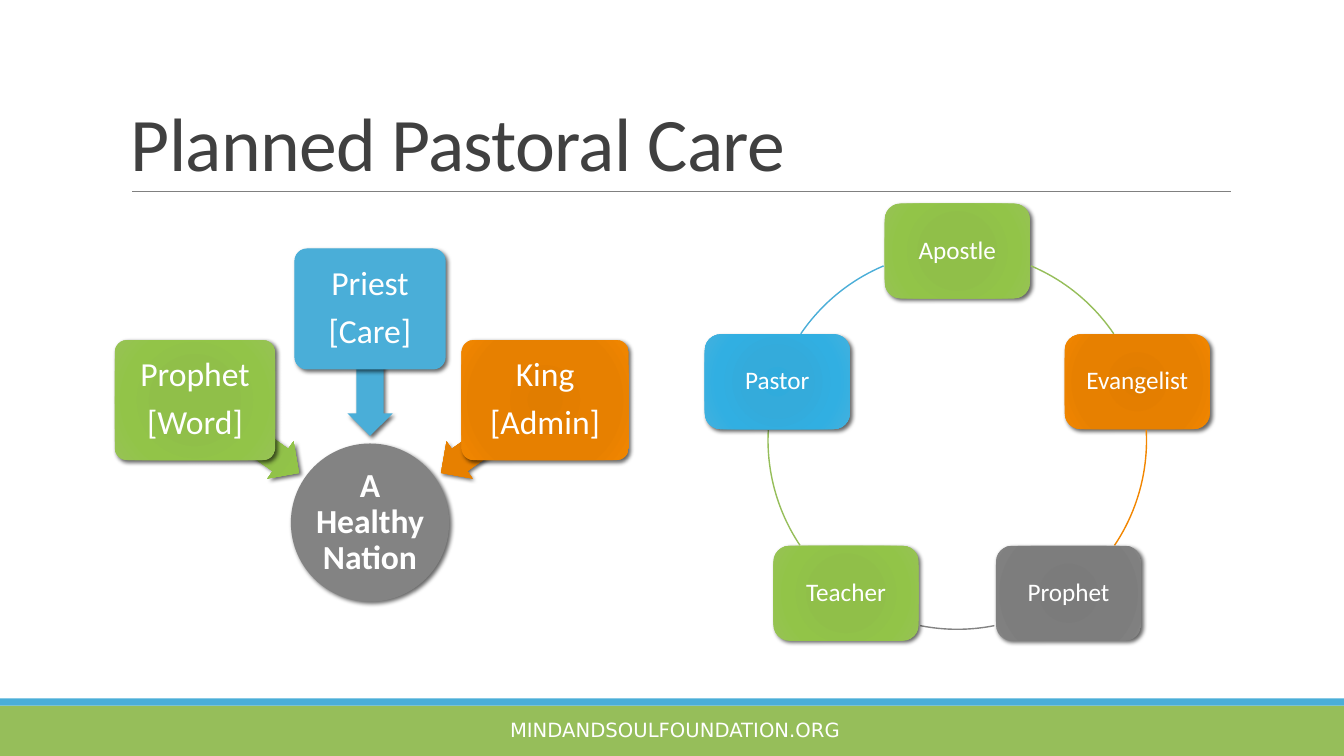
from dataclasses import dataclass
from math import cos, radians, sin

from pptx import Presentation
from pptx.dml.color import RGBColor
from pptx.enum.shapes import MSO_CONNECTOR, MSO_SHAPE
from pptx.enum.text import MSO_ANCHOR, PP_ALIGN
from pptx.oxml import parse_xml
from pptx.oxml.ns import qn
from pptx.util import Inches, Pt

SPACE = 'xmlns:a="http://schemas.openxmlformats.org/drawingml/2006/main"'


@dataclass(frozen=True)
class Theme:
    white: str = "FFFFFF"
    ink: str = "404040"
    rule: str = "808080"
    grey: str = "838383"
    green: str = "96BE5A"
    blue: str = "4AAED8"
    orange: str = "F28600"
    leaf: tuple = ("8FBF46", "90BF49", "92C448", "97C355")
    amber: tuple = ("E17D00", "E47E00", "E78000", "F28600")
    stone: tuple = ("7A7A7A", "7B7B7B", "7D7D7D", "838383")
    sky: tuple = ("30ABDC", "34ABDB", "31AFE2", "42B1DE")
    face: str = "Calibri"
    web: str = "DejaVu Sans"
    head: int = 54
    large: int = 24
    small: int = 18
    foot: int = 14


@dataclass(frozen=True)
class Box:
    x: float
    y: float
    w: float
    h: float

    def inches(self):
        return [Inches(v) for v in (self.x, self.y, self.w, self.h)]


THEME = Theme()


def about(x, y, w, h):
    return Box(x - w / 2, y - h / 2, w, h)


def polar(x, y, reach, angle):
    return x + reach * cos(radians(angle)), y + reach * sin(radians(angle))


def apply(thing, values):
    for name, value in values.items():
        setattr(thing, name, value)


def write(shape, lines, size, color=THEME.white, face=THEME.face, bold=False, wrap=True,
          align=PP_ALIGN.CENTER, anchor=MSO_ANCHOR.MIDDLE, pad=None, pitch=0.9, after=0.35):
    frame = shape.text_frame
    apply(frame, {"word_wrap": wrap, "vertical_anchor": anchor})
    if pad is not None:
        sides = ("left", "top", "right", "bottom")
        apply(frame, {f"margin_{side}": Inches(pad) for side in sides})
    for i, line in enumerate(lines):
        para = frame.add_paragraph() if i else frame.paragraphs[0]
        para.text = line
        apply(para, {"alignment": align, "line_spacing": pitch, "space_after": Pt(size * after)})
        for run in para.runs:
            apply(run.font, {"size": Pt(size), "name": face, "bold": bold})
            run.font.color.rgb = RGBColor.from_string(color)
    return frame


def paint(shape, tone):
    if isinstance(tone, str):
        shape.fill.solid()
        shape.fill.fore_color.rgb = RGBColor.from_string(tone)
        return
    stops = "".join(f'<a:gs pos="{spot * 1000}"><a:srgbClr val="{color}"/></a:gs>'
                    for spot, color in zip((0, 34, 70, 100), tone))
    edges = " ".join(f'{side}="100000"' for side in "ltrb")
    grade = parse_xml(f'<a:gradFill {SPACE} rotWithShape="1"><a:gsLst>{stops}</a:gsLst>'
                      f'<a:path path="circle"><a:fillToRect {edges}/></a:path></a:gradFill>')
    shape.element.spPr.find(qn("a:prstGeom")).addnext(grade)


def block(slide, kind, box, tone, shade=True, bends=(), turn=0):
    shape = slide.shapes.add_shape(kind, *box.inches())
    shape.rotation = turn
    for i, bend in enumerate(bends):
        shape.adjustments[i] = bend
    paint(shape, tone)
    shape.line.fill.background()
    shape.shadow.inherit = False
    if shade:
        shape.element.spPr.find(qn("a:effectLst")).append(parse_xml(
            f'<a:outerShdw {SPACE} blurRad="{Pt(3)}" dist="{Pt(2)}" dir="2700000" '
            'algn="br" rotWithShape="0"><a:srgbClr val="000000">'
            '<a:alpha val="60000"/></a:srgbClr></a:outerShdw>'))
    return shape


def footer(slide, box):
    strip = 0.07
    block(slide, MSO_SHAPE.RECTANGLE, Box(box.x, box.y + strip, box.w, box.h - strip),
          THEME.green, False)
    block(slide, MSO_SHAPE.RECTANGLE, Box(box.x, box.y, box.w, strip), THEME.blue, False)
    area = Box(box.x + 4.49, box.y + 0.14, 4.41, 0.34)
    label = slide.shapes.add_textbox(*area.inches())
    write(label, ["MINDANDSOULFOUNDATION.ORG"], THEME.foot, face=THEME.web,
          anchor=MSO_ANCHOR.TOP, pitch=1.0, after=0)


def header(slide, box):
    base = Inches(box.y + box.h)
    rule = slide.shapes.add_connector(MSO_CONNECTOR.STRAIGHT, Inches(box.x + 0.11), base,
                                      Inches(box.x + box.w + 0.01), base)
    rule.line.width = Pt(0.5)
    rule.line.color.rgb = RGBColor.from_string(THEME.rule)
    rule.element.spPr.append(parse_xml(f"<a:effectLst {SPACE}/>"))
    title = slide.shapes.add_textbox(*box.inches())
    frame = write(title, ["Planned Pastoral Care"], THEME.head, THEME.ink,
                  align=PP_ALIGN.LEFT, anchor=MSO_ANCHOR.BOTTOM, pitch=0.85, after=0)
    frame.paragraphs[0].runs[0].font._element.set("spc", "-50")


def funnel(slide, box):
    size = 1.57
    x, y = box.x + 2.54, box.y + box.h - size / 2
    hub = block(slide, MSO_SHAPE.OVAL, about(x, y, size, size), THEME.grey)
    write(hub, ["A\vHealthy\vNation"], THEME.large, bold=True, wrap=False, pad=0)
    roles = (("Prophet", "[Word]", 215, 1.59, THEME.leaf),
             ("Priest", "[Care]", 270, 1.49, THEME.blue),
             ("King", "[Admin]", 325, 1.66, THEME.amber))
    for name, task, angle, width, tone in roles:
        block(slide, MSO_SHAPE.LEFT_ARROW, about(*polar(x, y, 1.49, angle), 1.26, 0.45),
              tone, bends=(0.6, 0.5), turn=angle)
        card = block(slide, MSO_SHAPE.ROUNDED_RECTANGLE,
                     about(*polar(x, y, 2.12, angle), width, 1.19), tone, bends=(0.1,))
        if tone == THEME.blue:
            card.line.color.rgb = RGBColor.from_string(tone)
            card.line.width = Pt(0.75)
        write(card, [name, task], THEME.large, pad=0.05)


def cycle(slide, box):
    wide, high = 1.44, 0.94
    reach = (box.w - wide) / 2 / sin(radians(72))
    x, y = box.x + box.w / 2, box.y + high / 2 + reach
    gifts = (("Apostle", THEME.leaf, THEME.green, 292.9, 325.8),
             ("Evangelist", THEME.amber, THEME.orange, 357, 33.8),
             ("Prophet", THEME.stone, THEME.grey, 78.7, 101.3),
             ("Teacher", THEME.leaf, THEME.green, 146.2, 183),
             ("Pastor", THEME.sky, THEME.blue, 214.2, 247.1))
    for i, (name, tone, color, start, end) in enumerate(gifts):
        spot = polar(x, y, reach, 72 * i - 90)
        card = block(slide, MSO_SHAPE.ROUNDED_RECTANGLE, about(*spot, wide, high), tone)
        write(card, [name], THEME.small, pad=0.07)
        arc = slide.shapes.add_shape(MSO_SHAPE.ARC, *about(x, y, 2 * reach, 2 * reach).inches())
        for side, angle in enumerate((start, end)):
            arc.adjustments[side] = angle * 0.6
        arc.fill.background()
        arc.line.color.rgb = RGBColor.from_string(color)
        arc.line.width = Pt(1)
        arc.shadow.inherit = False


def main():
    deck = Presentation()
    apply(deck, {"slide_width": Inches(13.33), "slide_height": Inches(7.5)})
    slide = deck.slides.add_slide(deck.slide_layouts[6])
    footer(slide, Box(0, 6.93, 13.33, 0.57))
    header(slide, Box(1.2, 0.31, 11, 1.59))
    funnel(slide, Box(1.13, 2.47, 5.11, 3.5))
    cycle(slide, Box(6.99, 2.02, 5.01, 4.34))
    deck.save("out.pptx")


if __name__ == "__main__":
    main()
